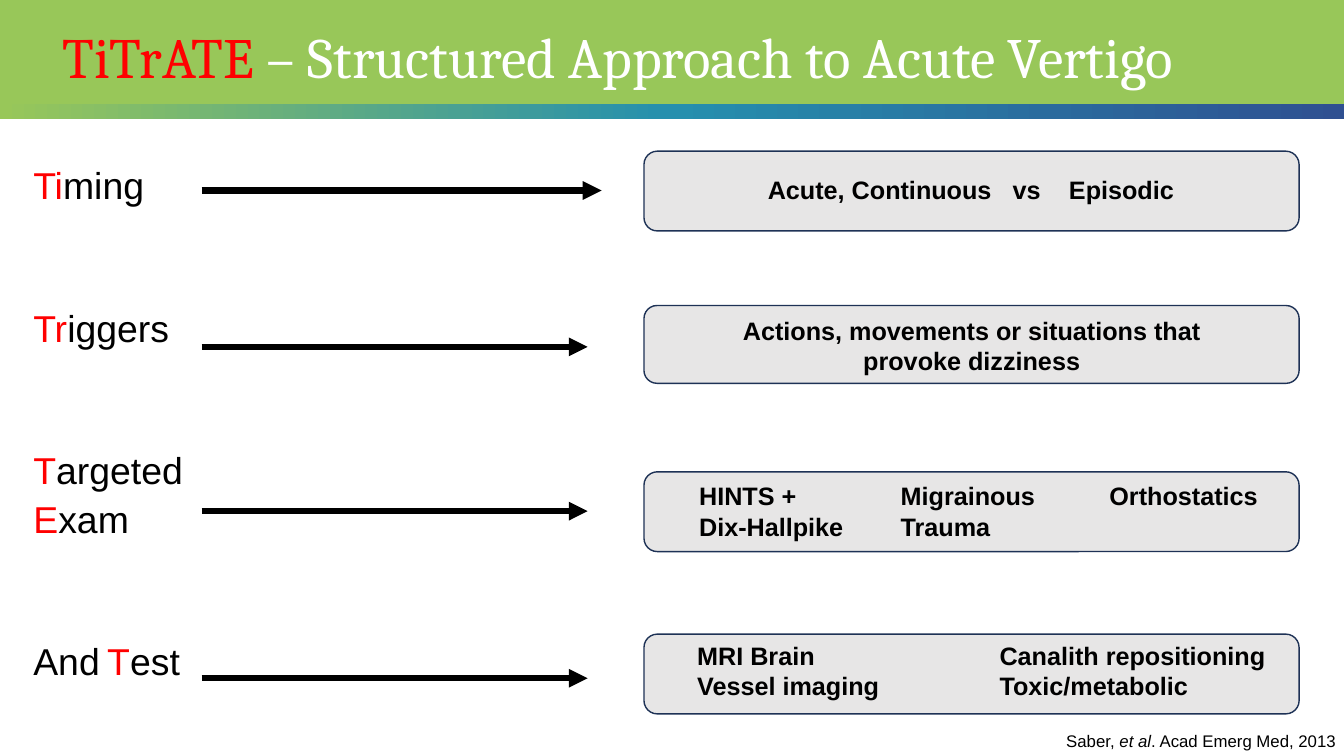
"""Build the TiTrATE slide on a structured approach to acute vertigo."""
from lxml.etree import SubElement
from pptx import Presentation
from pptx.dml.color import RGBColor
from pptx.enum.shapes import MSO_CONNECTOR as Line, MSO_SHAPE as Shape
from pptx.enum.text import MSO_ANCHOR as Anchor, PP_ALIGN as Align
from pptx.oxml.ns import qn
from pptx.util import Cm, Pt

COLOURS = {
    "green": "98C759", "teal": "258FAE", "blue": "2F5091", "grey": "E7E6E6",
    "navy": "1E3256", "red": "FF0000", "black": "000000", "white": "FFFFFF",
}
TITLE = [("TiTrATE ", "red"), ("– Structured Approach to Acute Vertigo", "white")]
CITATION = [("Saber, ", False), ("et al", True), (". Acad Emerg Med, 2013", False)]
STEPS = [
    {"label": [[("Ti", "red"), ("ming", "black")]],
     "line": 0, "arrow_y": 4.8, "arrow_end": 15.16, "panel": (3.81, 2.01),
     "detail": ["Acute, Continuous\tvs\tEpisodic"],
     "detail_at": (19.1, 4.27, 11.71, 1.02), "tabs": [6.17, 7.59], "align": Align.LEFT},
    {"label": [[("Tr", "red"), ("iggers", "black")]],
     "line": 3, "arrow_y": 8.74, "arrow_end": 14.81, "panel": (7.7, 1.96),
     "detail": ["Actions, movements or situations that provoke dizziness"],
     "detail_at": (17.48, 7.82, 14.02, 1.8), "tabs": [], "align": Align.CENTER},
    {"label": [[("T", "red"), ("argeted", "black")], [("E", "red"), ("xam", "black")]],
     "line": 6, "arrow_y": 12.88, "arrow_end": 14.81, "panel": (11.89, 2.01),
     "detail": ["HINTS +\tMigrainous\tOrthostatics", "Dix-Hallpike\tTrauma"],
     "detail_at": (17.37, 11.99, 15.93, 1.8), "tabs": [5.08, 10.34], "align": Align.LEFT},
    {"label": [[("And", "black"), (" ", "black"), ("T", "red"), ("est", "black")]],
     "line": 10, "arrow_y": 17.09, "arrow_end": 14.81, "panel": (15.98, 2.01),
     "detail": ["MRI Brain\tCanalith repositioning", "Vessel imaging\tToxic/metabolic"],
     "detail_at": (17.32, 16.0, 15.93, 1.8), "tabs": [7.62], "align": Align.LEFT},
]
SLIDE_WIDTH, SLIDE_HEIGHT = 33.87, 19.05
HEADER_HEIGHT, STRIPE_HEIGHT = 2.62, 0.38
LABEL_LEFT, LABEL_TOP, LABEL_WIDTH, LINE_PITCH = 0.59, 4.08, 5.2, 1.2
ARROW_LEFT, PANEL_LEFT, PANEL_WIDTH = 5.08, 16.23, 16.51


def colour(name):
    return RGBColor.from_string(COLOURS[name])


def add_span(para, text, size, tint="black", font="Arial", bold=False, italic=False):
    span = para.add_run()
    span.text = text
    span.font.size, span.font.name = Pt(size), font
    span.font.bold, span.font.italic = bold, italic
    span.font.color.rgb = colour(tint)


def add_box(page, left, top, width, height):
    box = page.shapes.add_textbox(Cm(left), Cm(top), Cm(width), Cm(height))
    box.text_frame.word_wrap = True
    return box.text_frame


def paragraphs(frame, count):
    return [frame.paragraphs[0]] + [frame.add_paragraph() for _ in range(count - 1)]


def add_panel(page, kind, left, top, width, height, fill, outline=None):
    panel = page.shapes.add_shape(kind, Cm(left), Cm(top), Cm(width), Cm(height))
    panel.shadow.inherit = False
    panel.fill.solid()
    panel.fill.fore_color.rgb = colour(fill)
    if outline:
        panel.line.color.rgb = colour(outline)
        panel.line.width = Pt(1)
    else:
        panel.line.fill.background()
    return panel


def add_header(page):
    add_panel(page, Shape.RECTANGLE, 0, 0, SLIDE_WIDTH, HEADER_HEIGHT, "green")
    stripe = add_panel(page, Shape.RECTANGLE, 0, HEADER_HEIGHT,
                       SLIDE_WIDTH, STRIPE_HEIGHT, "green")
    stripe.fill.gradient()
    stripe.fill.gradient_angle = 0
    stops = stripe._element.spPr.find(".//" + qn("a:gsLst"))
    for stop in list(stops):
        stops.remove(stop)
    for position, name in enumerate(("green", "teal", "blue")):
        stop = SubElement(stops, qn("a:gs"), pos=str(position * 50000))
        SubElement(stop, qn("a:srgbClr"), val=COLOURS[name])

    title = page.shapes.title
    title.left, title.top, title.width, title.height = Cm(1.32), Cm(0.69), Cm(31.39), Cm(1.75)
    title.text_frame.vertical_anchor = Anchor.MIDDLE
    para = title.text_frame.paragraphs[0]
    para.alignment, para.line_spacing = Align.LEFT, 0.8
    for text, tint in TITLE:
        add_span(para, text, 40.7, tint, "Cambria")
    page.shapes._spTree.append(title._element)


def add_label(page, lines, first_line):
    frame = add_box(page, LABEL_LEFT, LABEL_TOP + first_line * LINE_PITCH,
                    LABEL_WIDTH, LINE_PITCH * len(lines))
    for index, (para, spans) in enumerate(zip(paragraphs(frame, len(lines)), lines)):
        para.line_spacing = 0.9
        para.space_before = Pt(6 if index else 0)
        for text, tint in spans:
            add_span(para, text, 18.7 if text == " " else 26.7, tint)


def add_arrow(page, y, end):
    arrow = page.shapes.add_connector(Line.STRAIGHT, Cm(ARROW_LEFT), Cm(y), Cm(end), Cm(y))
    arrow.line.color.rgb = colour("black")
    arrow.line.width = Pt(4.5)
    SubElement(arrow.line._get_or_add_ln(), qn("a:tailEnd"), type="triangle")
    SubElement(arrow._element.spPr, qn("a:effectLst"))


def add_detail(page, step):
    frame = add_box(page, *step["detail_at"])
    for para, text in zip(paragraphs(frame, len(step["detail"])), step["detail"]):
        para.alignment = step["align"]
        if step["tabs"]:
            tabs = SubElement(para._p.get_or_add_pPr(), qn("a:tabLst"))
            for stop in step["tabs"]:
                SubElement(tabs, qn("a:tab"), pos=str(Cm(stop)), algn="l")
        add_span(para, text, 18, bold=True)


def add_citation(page):
    frame = add_box(page, 26.62, 18.29, 7.25, 0.76)
    frame.margin_right = 0
    for text, italic in CITATION:
        add_span(frame.paragraphs[0], text, 12, italic=italic)


def main():
    deck = Presentation()
    deck.slide_width, deck.slide_height = Cm(SLIDE_WIDTH), Cm(SLIDE_HEIGHT)
    page = deck.slides.add_slide(deck.slide_layouts[5])
    add_header(page)
    for step in STEPS:
        panel_top, panel_height = step["panel"]
        add_label(page, step["label"], step["line"])
        add_arrow(page, step["arrow_y"], step["arrow_end"])
        add_panel(page, Shape.ROUNDED_RECTANGLE, PANEL_LEFT, panel_top,
                  PANEL_WIDTH, panel_height, "grey", "navy")
        add_detail(page, step)
    add_citation(page)
    deck.save("out.pptx")


if __name__ == "__main__":
    main()
